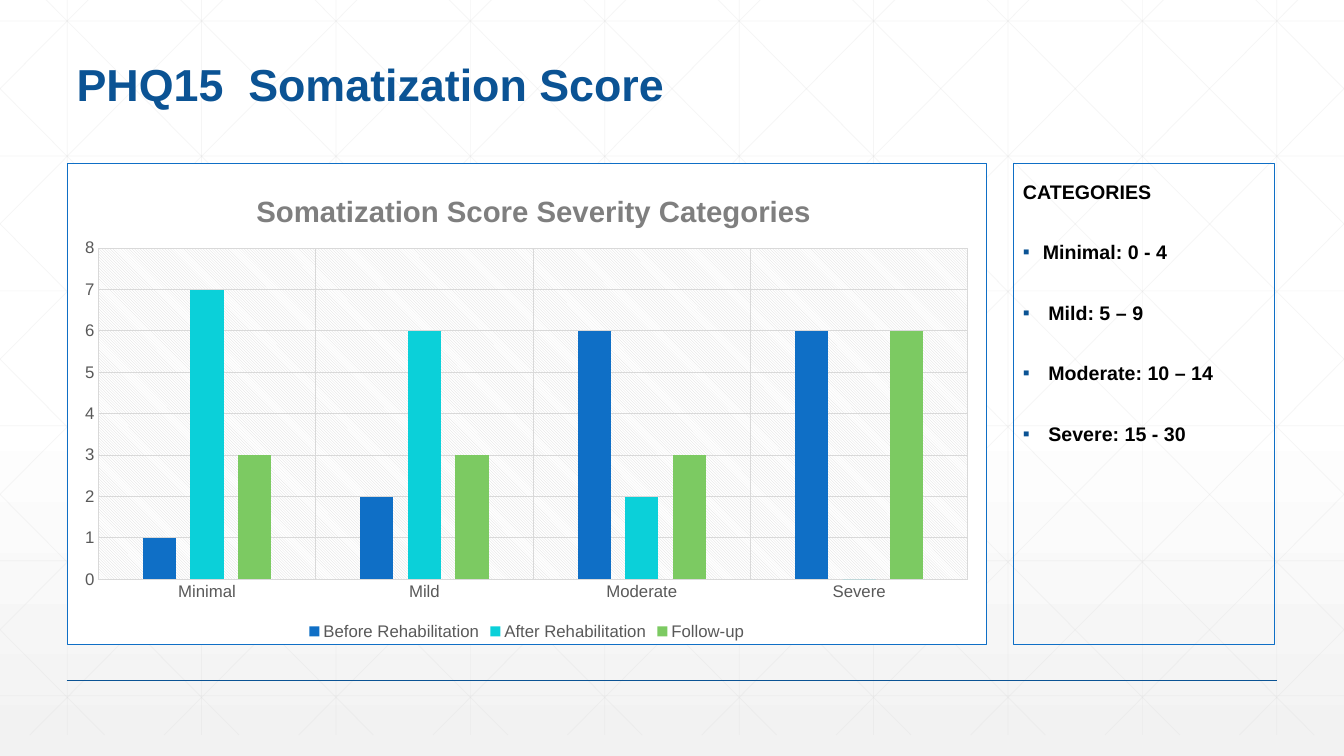
from copy import deepcopy
from dataclasses import dataclass

from lxml import etree
from pptx import Presentation
from pptx import util as u
from pptx.chart.data import CategoryChartData
from pptx.dml.color import RGBColor
from pptx.enum import chart as charts, shapes, text
from pptx.oxml import ns, parse_xml

COLOURS = {
    "navy": "0B5394", "blue": "0F6FC6", "cyan": "0BD0D9", "green": "7CCA62",
    "white": "FFFFFF", "mist": "F2F2F2", "grid": "D9D9D9",
    "label": "595959", "heading": "7F7F7F", "black": "000000",
}
FONT = "Arial"
WIDTH, HEIGHT = 33.87, 19.05


@dataclass
class Line:
    x1: float
    y1: float
    x2: float
    y2: float


@dataclass
class Series:
    name: str
    values: tuple[int, ...]
    colour: str


@dataclass
class Band:
    label: str
    indent: float


CATEGORIES = ("Minimal", "Mild", "Moderate", "Severe")
SERIES = (
    Series("Before Rehabilitation", (1, 2, 6, 6), "blue"),
    Series("After Rehabilitation", (7, 6, 2, 0), "cyan"),
    Series("Follow-up", (3, 3, 3, 6), "green"),
)
BANDS = (
    Band("Minimal: 0 - 4", 0.5),
    Band("Mild: 5 – 9", 0.64),
    Band("Moderate: 10 – 14", 0.64),
    Band("Severe: 15 - 30", 0.64),
)


def rgb(colour: str) -> RGBColor:
    return RGBColor.from_string(COLOURS[colour])


def set_all(target, **values) -> None:
    for name, value in values.items():
        setattr(target, name, value)


def style_font(font, size: float, colour: str, bold: bool = False) -> None:
    set_all(font, name=FONT, size=u.Pt(size), bold=bold)
    font.color.rgb = rgb(colour)


def style_line(line, colour: str, width: float) -> None:
    line.color.rgb = rgb(colour)
    line.width = u.Pt(width)


def draw_line(slide, line: Line, colour: str, width: float, opacity: int = 100) -> None:
    ends = (u.Cm(v) for v in (line.x1, line.y1, line.x2, line.y2))
    connector = slide.shapes.add_connector(shapes.MSO_CONNECTOR.STRAIGHT, *ends)
    style_line(connector.line, colour, width)
    properties = connector._element.spPr
    if opacity < 100:
        shade = properties.find(".//" + ns.qn("a:srgbClr"))
        etree.SubElement(shade, ns.qn("a:alpha"), val=str(opacity * 1000))
    etree.SubElement(properties, ns.qn("a:effectLst"))


def lattice() -> list[Line]:
    top, bottom, step, run = -0.53, 18.52, WIDTH / 10, 18.93
    slope = (bottom - top) / run
    lines = [Line((k + 0.5) * step, top, (k + 0.5) * step, bottom) for k in range(10)]
    lines += [Line(0, 0.53 + 3.4 * k, WIDTH, 0.53 + 3.4 * k) for k in range(6)]
    # Diagonals stop at the slide's sides; each has a mirror twin
    for k in range(-5, 10):
        start = 0.64 + k * step
        left, right = max(start, 0), min(start + run, WIDTH)
        y1, y2 = (top + (x - start) * slope for x in (left, right))
        lines += [Line(left, y1, right, y2), Line(WIDTH - left, y1, WIDTH - right, y2)]
    return lines


def draw_background(slide) -> None:
    fill = slide.background.fill
    fill.gradient()
    fill.gradient_angle = 270
    for stop, colour in zip(fill.gradient_stops, ("white", "mist")):
        stop.color.rgb = rgb(colour)
    first = slide.element.find(".//" + ns.qn("a:gs"))
    middle = deepcopy(first)
    middle.set("pos", "53000")
    first.addnext(middle)
    for line in lattice():
        draw_line(slide, line, "grid", 0.5, 25)
    draw_line(slide, Line(1.68, 17.15, 32.18, 17.15), "navy", 1)


def draw_title(slide) -> None:
    title = slide.shapes.add_textbox(u.Cm(1.68), u.Cm(1.24), u.Cm(26.67), u.Cm(1.7))
    set_all(title.text_frame, word_wrap=True, vertical_anchor=text.MSO_ANCHOR.BOTTOM)
    heading = title.text_frame.paragraphs[0]
    heading.line_spacing = 0.9
    run = heading.add_run()
    run.text = "PHQ15  Somatization Score"
    style_font(run.font, 32, "navy", True)


def chart_layout(values: dict[str, float], inner: bool = False):
    target = '<c:layoutTarget val="inner"/>' if inner else ""
    modes = "".join(f'<c:{axis}Mode val="edge"/>' for axis in "xy")
    sizes = "".join(f'<c:{name} val="{value}"/>' for name, value in values.items())
    return parse_xml(f'<c:layout {ns.nsdecls("c")}><c:manualLayout>{target}{modes}{sizes}'
                     "</c:manualLayout></c:layout>")


def chart_properties(content: str):
    return parse_xml(f'<c:spPr {ns.nsdecls("c", "a")}>{content}</c:spPr>')


def solid(colour: str) -> str:
    return f'<a:solidFill><a:srgbClr val="{COLOURS[colour]}"/></a:solidFill>'


def draw_chart(slide) -> None:
    data = CategoryChartData(number_format="###0")
    data.categories = CATEGORIES
    for series in SERIES:
        data.add_series(series.name, series.values)
    chart = slide.shapes.add_chart(
        charts.XL_CHART_TYPE.COLUMN_CLUSTERED,
        u.Cm(1.68), u.Cm(4.11), u.Cm(23.19), u.Cm(12.14), data).chart
    style_font(chart.font, 10, "black")

    # Columns
    plot = chart.plots[0]
    set_all(plot, gap_width=267, overlap=-43, vary_by_categories=False)
    for columns, series in zip(plot.series, SERIES):
        columns.format.fill.solid()
        columns.format.fill.fore_color.rgb = rgb(series.colour)

    # Axes and legend
    for axis in (chart.category_axis, chart.value_axis):
        set_all(axis, has_major_gridlines=True, major_tick_mark=charts.XL_TICK_MARK.NONE,
                minor_tick_mark=charts.XL_TICK_MARK.NONE)
        style_font(axis.tick_labels.font, 12, "label")
        style_line(axis.major_gridlines.format.line, "grid", 0.75)
    style_line(chart.category_axis.format.line, "grid", 0.75)
    set_all(chart.value_axis, minimum_scale=0, maximum_scale=8, major_unit=1)
    set_all(chart.value_axis.tick_labels, number_format="###0", number_format_is_linked=False)
    chart.value_axis.format.line.fill.background()
    chart.has_legend = True
    set_all(chart.legend, position=charts.XL_LEGEND_POSITION.BOTTOM, include_in_layout=False)
    style_font(chart.legend.font, 12, "label")

    # Chart title
    run = chart.chart_title.text_frame.paragraphs[0].add_run()
    run.text = "Somatization Score Severity Categories"
    style_font(run.font, 21, "heading", True)
    title = chart.chart_title._element
    for old in title.findall(ns.qn("c:layout")):
        title.remove(old)
    title.find(ns.qn("c:tx")).addnext(chart_layout({"x": 0.2, "y": 0.05}))
    chart.chart_title.include_in_layout = False

    # Plot placement, hatching and frame
    area = chart._chartSpace.chart.plotArea
    for old in area.findall(ns.qn("c:layout")):
        area.remove(old)
    area.insert(0, chart_layout({"x": 0.034, "y": 0.176, "w": 0.946, "h": 0.689}, True))
    area.append(chart_properties(
        f'<a:pattFill prst="ltDnDiag"><a:fgClr><a:srgbClr val="{COLOURS["grid"]}"/></a:fgClr>'
        f'<a:bgClr><a:srgbClr val="{COLOURS["white"]}"/></a:bgClr></a:pattFill>'))
    chart._chartSpace.chart.addnext(chart_properties(
        f'{solid("white")}<a:ln w="9525">{solid("blue")}</a:ln>'))


def add_entry(paragraph, label: str) -> None:
    set_all(paragraph, line_spacing=1.5, space_before=u.Pt(18), alignment=text.PP_ALIGN.LEFT)
    run = paragraph.add_run()
    run.text = label
    style_font(run.font, 14, "black", True)


def draw_categories(slide) -> None:
    panel = slide.shapes.add_shape(shapes.MSO_SHAPE.RECTANGLE,
                                   u.Cm(25.53), u.Cm(4.11), u.Cm(6.58), u.Cm(12.14))
    panel.shadow.inherit = False
    panel.fill.background()
    style_line(panel.line, "blue", 0.75)
    frame = panel.text_frame
    set_all(frame, word_wrap=True, vertical_anchor=text.MSO_ANCHOR.TOP)
    add_entry(frame.paragraphs[0], "CATEGORIES")
    for band in BANDS:
        entry = frame.add_paragraph()
        add_entry(entry, band.label)
        properties = entry._p.get_or_add_pPr()
        properties.set("marL", str(u.Cm(band.indent)))
        properties.set("indent", str(-u.Cm(band.indent)))
        bullet = etree.SubElement(properties, ns.qn("a:buClr"))
        etree.SubElement(bullet, ns.qn("a:srgbClr"), val=COLOURS["navy"])
        etree.SubElement(properties, ns.qn("a:buFont"), typeface=FONT)
        etree.SubElement(properties, ns.qn("a:buChar"), char="▪")


def main() -> None:
    deck = Presentation()
    set_all(deck, slide_width=u.Cm(WIDTH), slide_height=u.Cm(HEIGHT))
    slide = deck.slides.add_slide(deck.slide_layouts[6])
    for draw in (draw_background, draw_title, draw_chart, draw_categories):
        draw(slide)
    deck.save("out.pptx")


if __name__ == "__main__":
    main()
